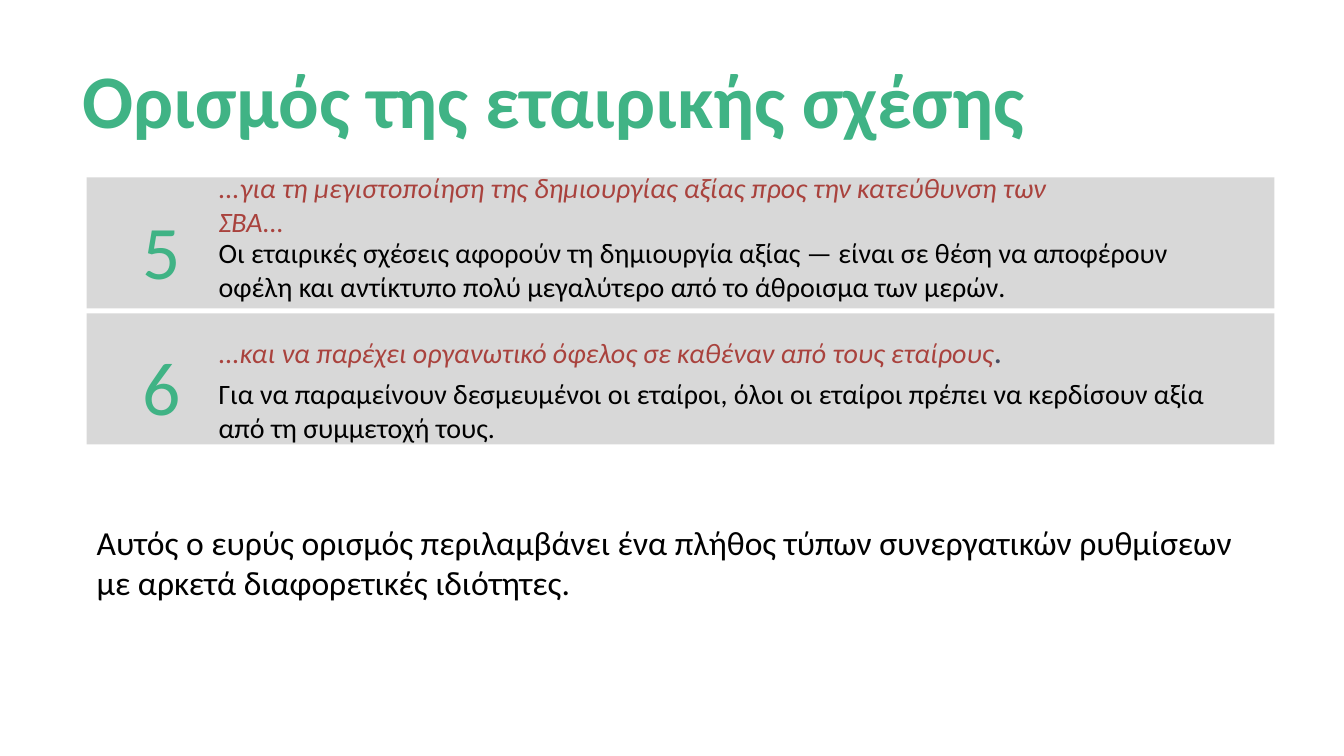
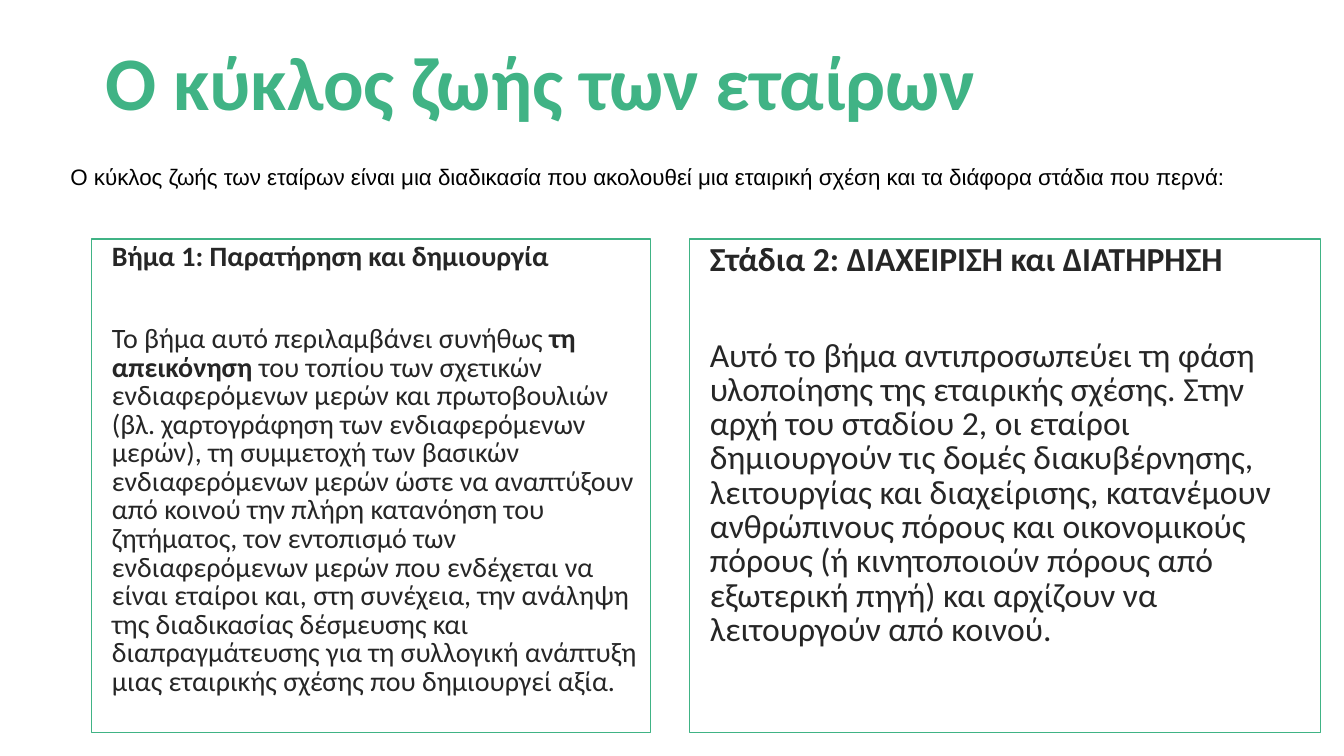
from pptx import Presentation
from pptx.dml.color import RGBColor
from pptx.enum.shapes import MSO_SHAPE
from pptx.enum.text import MSO_ANCHOR, PP_ALIGN
from pptx.util import Emu, Pt

GREEN, RED, GREY, SLATE = "40B385", "A9423D", "D8D8D8", "464D61"
WHITE, BLACK, DARK = "FFFFFF", "000000", "262626"
BODY_FONT, INTRO_FONT = "Calibri", "Arial"


def px(n):
    """100 px make one inch."""
    return Emu(n * 9144)


def rgb(value):
    return RGBColor.from_string(value)


def write(p, text, size=20, color=BLACK, font=BODY_FONT, bold=False, italic=False):
    r = p.add_run()
    r.text = text
    f = r.font
    f.size, f.name, f.bold, f.italic = Pt(size), font, bold, italic
    f.color.rgb = rgb(color)


class Deck:
    LINE_SPACING = 0.85

    def __init__(self):
        self.prs = Presentation()
        self.prs.slide_width, self.prs.slide_height = px(1333), px(750)
        self.s = None

    def slide(self, title, x, y, h):
        self.s = self.prs.slides.add_slide(self.prs.slide_layouts[6])
        p = self.text(x, y, 1178, h, title, anchor=MSO_ANCHOR.MIDDLE,
                      size=54, color=GREEN, bold=True)
        p.line_spacing = self.LINE_SPACING

    def frame(self, tf, anchor=MSO_ANCHOR.TOP, inset=(10, 5)):
        tf.word_wrap = True
        tf.vertical_anchor = anchor
        tf.margin_left = tf.margin_right = px(inset[0])
        tf.margin_top = tf.margin_bottom = px(inset[1])
        return tf

    def text(self, x, y, w, h, text, anchor=MSO_ANCHOR.TOP, inset=(10, 5),
             align=PP_ALIGN.LEFT, **fmt):
        box = self.s.shapes.add_textbox(px(x), px(y), px(w), px(h))
        p = self.frame(box.text_frame, anchor, inset).paragraphs[0]
        p.alignment = align
        write(p, text, **fmt)
        return p

    def rect(self, x, y, w, h, fill, line=None):
        sp = self.s.shapes.add_shape(MSO_SHAPE.RECTANGLE, px(x), px(y), px(w), px(h))
        sp.shadow.inherit = False
        sp.fill.solid()
        sp.fill.fore_color.rgb = rgb(fill)
        if line:
            sp.line.color.rgb = rgb(line)
            sp.line.width = Pt(1)
        else:
            sp.line.fill.background()
        return sp

    def numbered_band(self, y, number, phrase, phrase_box, body, body_y, body_w):
        """Grey band with a large number; returns the paragraph of the red phrase."""
        self.rect(86, y, 1178, 130, GREY)
        self.text(116, y + 6, 88, 117, number, anchor=MSO_ANCHOR.BOTTOM,
                  inset=(13, 7), align=PP_ALIGN.CENTER, size=54, color=GREEN)
        self.text(207, body_y, body_w, 65, body)
        phrase_y, phrase_w, phrase_h = phrase_box
        return self.text(207, phrase_y, phrase_w, phrase_h, phrase,
                         anchor=MSO_ANCHOR.MIDDLE, color=RED, italic=True)

    def stage_card(self, x, w, heading, runs, size, gap):
        """Outlined card; runs are (text, bold) pairs."""
        tf = self.frame(self.rect(x, 237, w, 490, WHITE, GREEN).text_frame)
        tf.margin_left = px(20)
        paragraphs = [tf.paragraphs[0], tf.add_paragraph()]
        for p, parts in zip(paragraphs, ([(heading, True)], runs)):
            p.alignment = PP_ALIGN.LEFT
            p.line_spacing = self.LINE_SPACING
            for text, bold in parts:
                write(p, text, size=size, color=DARK, bold=bold)
        paragraphs[1].space_before = Pt(gap)


def definition_slide(deck):
    deck.slide("Ορισμός της εταιρικής σχέσης", 72, 55, 100)
    deck.numbered_band(
        176, "5",
        "...για τη μεγιστοποίηση της δημιουργίας αξίας προς την κατεύθυνση των ΣΒΑ...",
        (190, 883, 26),
        "Οι εταιρικές σχέσεις αφορούν τη δημιουργία αξίας — είναι σε θέση να αποφέρουν "
        "οφέλη και αντίκτυπο πολύ μεγαλύτερο από το άθροισμα των μερών.", 229, 1034)
    p = deck.numbered_band(
        311, "6",
        "...και να παρέχει οργανωτικό όφελος σε καθέναν από τους εταίρους",
        (339, 1020, 16),
        "Για να παραμείνουν δεσμευμένοι οι εταίροι, όλοι οι εταίροι πρέπει να κερδίσουν "
        "αξία από τη συμμετοχή τους.", 369, 1000)
    write(p, ".", size=24, color=SLATE, italic=True)
    deck.text(86, 513, 1178, 91,
              "Αυτός ο ευρύς ορισμός περιλαμβάνει ένα πλήθος τύπων συνεργατικών ρυθμίσεων "
              "με αρκετά διαφορετικές ιδιότητες.", size=24)


def life_cycle_slide(deck):
    deck.slide("Ο κύκλος ζωής των εταίρων", 95, -4, 181)
    deck.text(60, 157, 1213, 37,
              "Ο κύκλος ζωής των εταίρων είναι μια διαδικασία που ακολουθεί μια εταιρική "
              "σχέση και τα διάφορα στάδια που περνά:", size=16, font=INTRO_FONT)
    deck.stage_card(91, 554, "Βήμα 1: Παρατήρηση και δημιουργία", [
        ("Το βήμα αυτό περιλαμβάνει συνήθως ", False),
        ("τη απεικόνηση ", True),
        ("του τοπίου των σχετικών ενδιαφερόμενων μερών και πρωτοβουλιών (βλ. χαρτογράφηση "
         "των ενδιαφερόμενων μερών), τη συμμετοχή των βασικών ενδιαφερόμενων μερών ώστε να "
         "αναπτύξουν από κοινού την πλήρη κατανόηση του ζητήματος, τον εντοπισμό των "
         "ενδιαφερόμενων μερών που ενδέχεται να είναι εταίροι και, στη συνέχεια, την ανάληψη "
         "της διαδικασίας δέσμευσης και διαπραγμάτευσης για τη συλλογική ανάπτυξη μιας "
         "εταιρικής σχέσης που δημιουργεί αξία.", False),
    ], size=20, gap=38)
    deck.stage_card(684, 626, "Στάδια 2: ΔΙΑΧΕΙΡΙΣΗ και ΔΙΑΤΗΡΗΣΗ", [
        ("Αυτό το βήμα αντιπροσωπεύει τη φάση υλοποίησης της εταιρικής σχέσης. Στην αρχή του "
         "σταδίου 2, οι εταίροι δημιουργούν τις δομές διακυβέρνησης, λειτουργίας και "
         "διαχείρισης, κατανέμουν ανθρώπινους πόρους και οικονομικούς πόρους (ή κινητοποιούν "
         "πόρους από εξωτερική πηγή) και αρχίζουν να λειτουργούν από κοινού.", False),
    ], size=24, gap=44)


def main():
    deck = Deck()
    definition_slide(deck)
    life_cycle_slide(deck)
    deck.prs.save("out.pptx")


if __name__ == "__main__":
    main()
